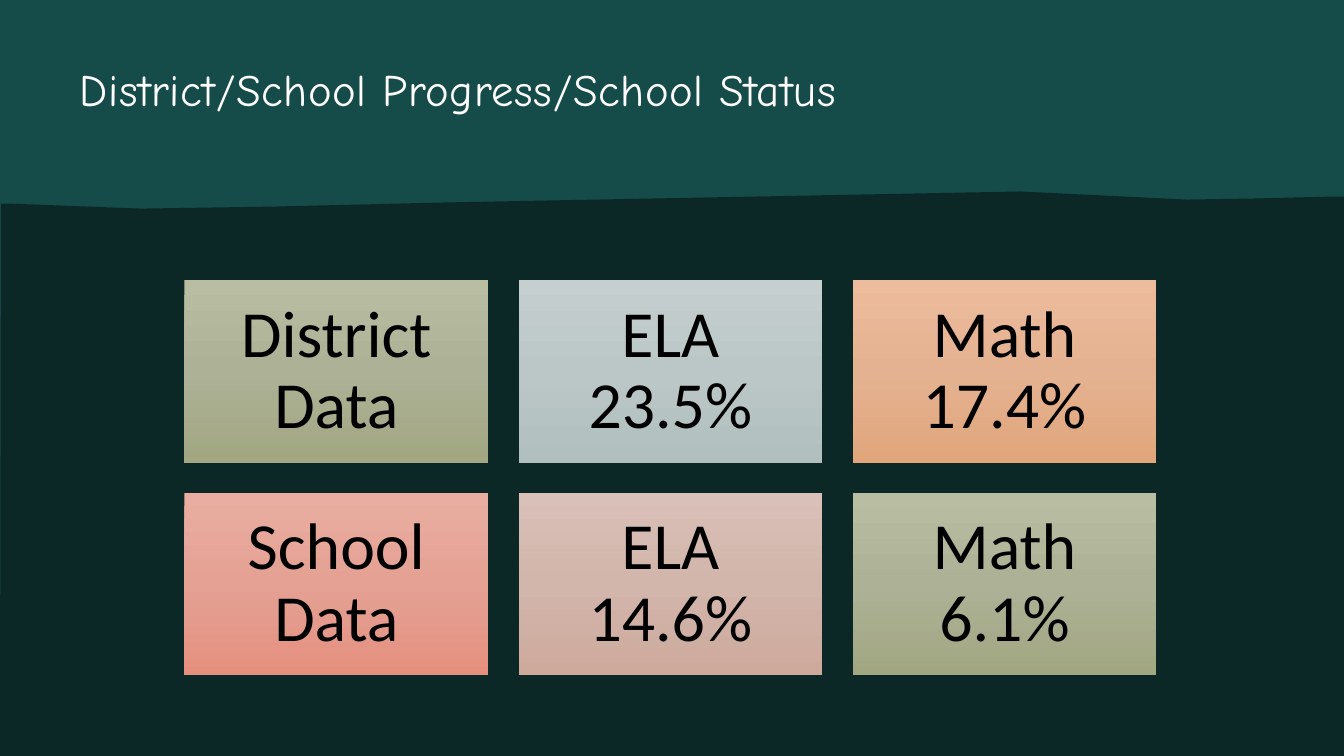
import copy
from dataclasses import dataclass

import pptx
import pptx.dml.color
import pptx.enum.shapes
import pptx.enum.text
import pptx.util


@dataclass(frozen=True)
class Theme:
    dark: str = "0B2827"
    teal: str = "154C4A"
    title_text: str = "FFFFFF"
    card_text: str = "000000"
    title_font: str = "Comic Neue"
    card_font: str = "Calibri"
    title_size: float = 32
    card_size: float = 47
    # Card gradients, top to bottom
    olive: tuple = ("B9BDA2", "ADB196", "A2A782")
    mist: tuple = ("C6CFCF", "BBC6C6", "B1BFBF")
    peach: tuple = ("EDBC9D", "E4B290", "E1A67C")
    coral: tuple = ("E9AEA1", "E4A194", "E5907F")
    rose: tuple = ("D9C0B8", "D2B5AB", "CEAA9D")


@dataclass(frozen=True)
class Box:
    left: float
    top: float
    width: float
    height: float

    def emu(self):
        lengths = (self.left, self.top, self.width, self.height)
        return [pptx.util.Inches(length) for length in lengths]


THEME = Theme()
PAGE = Box(0, 0, 13.33, 7.5)
TITLE_BOX = Box(0.79, 0.68, 11.73, 0.75)
RIDGE_BOX = Box(0, 1.9, 13.33, 5.6)
CARD_AREA = Box(1.83, 2.78, 9.64, 3.92)
CARD_GAP = 0.3

# Ridge line from left to right, in inches from the top left of its box
RIDGE_LINE = [(0.01, 0.12), (0.08, 0.12), (1.4, 0.17), (2.72, 0.15),
              (3.54, 0.13), (4.36, 0.11), (10.12, 0), (11.77, 0.08),
              (12.43, 0.07), (13.23, 0.05), (13.33, 0.05)]

CARD_ROWS = [
    [("District Data", THEME.olive), ("ELA 23.5%", THEME.mist),
     ("Math 17.4%", THEME.peach)],
    [("School Data", THEME.coral), ("ELA 14.6%", THEME.rose),
     ("Math 6.1%", THEME.olive)],
]


def rgb(value):
    return pptx.dml.color.RGBColor.from_string(value)


def fill_plain(shape, color):
    shape.fill.solid()
    shape.fill.fore_color.rgb = rgb(color)
    shape.line.fill.background()
    shape.shadow.inherit = False


def fill_gradient(shape, colors):
    """Shade a shape downwards through three evenly spaced colours."""
    shape.fill.gradient()
    shape.fill.gradient_angle = 270
    first_stop = shape.element.spPr.xpath(".//a:gs")[0]
    first_stop.addnext(copy.deepcopy(first_stop))
    for index, (stop, color) in enumerate(zip(shape.fill.gradient_stops, colors)):
        stop.position = index / (len(colors) - 1)
        stop.color.rgb = rgb(color)
    shape.line.fill.background()
    shape.shadow.inherit = False


def set_text(shape, text, font, size, color, align, anchor, spacing, inset):
    frame = shape.text_frame
    frame.auto_size = pptx.enum.text.MSO_AUTO_SIZE.NONE
    frame.word_wrap = True
    frame.vertical_anchor = anchor
    frame.margin_left = frame.margin_right = pptx.util.Inches(inset)
    frame.margin_top = frame.margin_bottom = pptx.util.Inches(inset)
    para = frame.paragraphs[0]
    para.alignment = align
    para.line_spacing = spacing
    span = para.add_run()
    span.text = text
    span.font.name = font
    span.font.size = pptx.util.Pt(size)
    span.font.color.rgb = rgb(color)
    return span


def add_rectangle(slide, box):
    return slide.shapes.add_shape(
        pptx.enum.shapes.MSO_SHAPE.RECTANGLE, *box.emu())


def add_backdrop(slide, box):
    # Teal sheet, kept behind the title
    slide.background.fill.solid()
    slide.background.fill.fore_color.rgb = rgb(THEME.dark)
    sheet = add_rectangle(slide, box)
    fill_plain(sheet, THEME.teal)
    slide.shapes.title.element.addprevious(sheet.element)


def add_ridge(slide, box):
    # Dark ground with an uneven upper edge
    corners = [(box.width, box.height), (0, box.height)]
    points = [(pptx.util.Inches(box.left + x), pptx.util.Inches(box.top + y))
              for x, y in RIDGE_LINE + corners]
    builder = slide.shapes.build_freeform(*points[0])
    builder.add_line_segments(points[1:], close=True)
    fill_plain(builder.convert_to_shape(), THEME.dark)


def add_title(slide, box, text):
    title = slide.shapes.title
    title.left, title.top, title.width, title.height = box.emu()
    span = set_text(title, text, THEME.title_font, THEME.title_size,
                    THEME.title_text, pptx.enum.text.PP_ALIGN.LEFT,
                    pptx.enum.text.MSO_ANCHOR.TOP, 0.88, 0)
    # Letter spacing, in hundredths of a point
    span.font._element.set("spc", "40")


def add_cards(slide, box, rows):
    # Even grid of shaded cards
    columns = len(rows[0])
    width = (box.width - CARD_GAP * (columns - 1)) / columns
    height = (box.height - CARD_GAP * (len(rows) - 1)) / len(rows)
    for row, cards in enumerate(rows):
        for column, (text, colors) in enumerate(cards):
            card = add_rectangle(slide, Box(
                box.left + column * (width + CARD_GAP),
                box.top + row * (height + CARD_GAP), width, height))
            fill_gradient(card, colors)
            set_text(card, text, THEME.card_font, THEME.card_size,
                     THEME.card_text, pptx.enum.text.PP_ALIGN.CENTER,
                     pptx.enum.text.MSO_ANCHOR.MIDDLE, 0.9, 0.2)


def main():
    deck = pptx.Presentation()
    deck.slide_width = pptx.util.Inches(PAGE.width)
    deck.slide_height = pptx.util.Inches(PAGE.height)
    title_only = deck.slide_layouts.get_by_name("Title Only")
    slide = deck.slides.add_slide(title_only)
    add_backdrop(slide, PAGE)
    add_title(slide, TITLE_BOX, "District/School Progress/School Status")
    add_ridge(slide, RIDGE_BOX)
    add_cards(slide, CARD_AREA, CARD_ROWS)
    deck.save("out.pptx")


if __name__ == "__main__":
    main()
